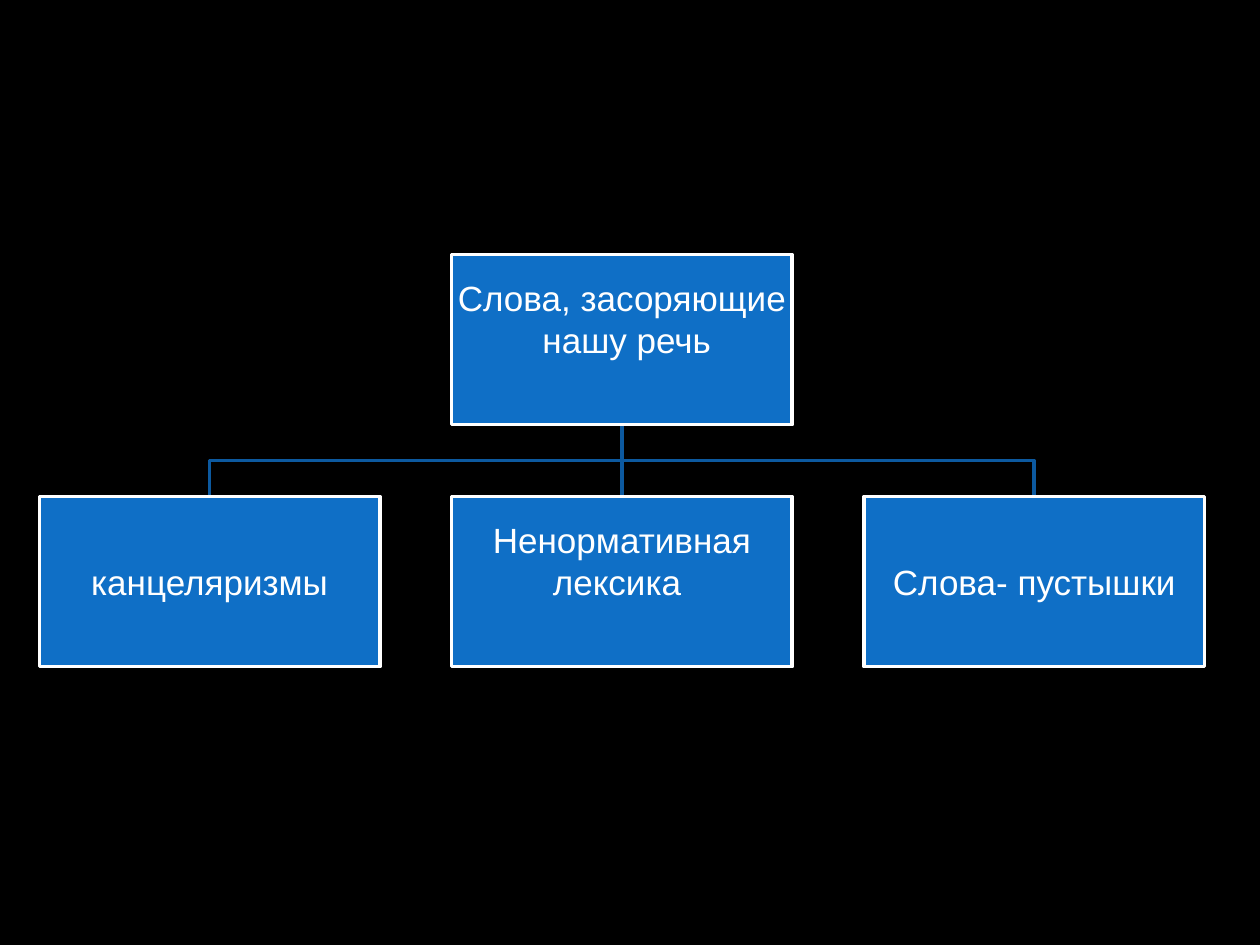
"""Build a slide with a tree of the kinds of words that litter speech."""
from lxml import etree
from pptx import Presentation
from pptx.dml.color import RGBColor
from pptx.enum.shapes import MSO_CONNECTOR, MSO_SHAPE
from pptx.enum.text import MSO_ANCHOR, PP_ALIGN
from pptx.oxml.ns import qn
from pptx.util import Pt

RECTANGLE = MSO_SHAPE.RECTANGLE
STRAIGHT = MSO_CONNECTOR.STRAIGHT
MIDDLE = MSO_ANCHOR.MIDDLE
CENTER = PP_ALIGN.CENTER

BLACK = RGBColor(0x00, 0x00, 0x00)
WHITE = RGBColor(0xFF, 0xFF, 0xFF)
BLUE = RGBColor(0x0F, 0x6F, 0xC6)
DARK_BLUE = RGBColor(0x0C, 0x59, 0x9F)

BOX_WIDTH, BOX_HEIGHT = 194.6, 97.3
FIRST_LEFT, COLUMN_STEP = 22.5, 235.6
ROOT_TOP, BRANCH_TOP = 145.4, 283.7
ROOT_COLUMN = 1
INSET, RAISED_INSET = 0.9, 24.9
LINE_WIDTH = 2

ROOT = ("Слова, засоряющие\v нашу речь", RAISED_INSET)
BRANCHES = [
    ("канцеляризмы", INSET),
    ("Ненормативная\nлексика ", RAISED_INSET),
    ("Слова- пустышки", INSET),
]


def column_left(column):
    return FIRST_LEFT + column * COLUMN_STEP


def column_center(column):
    return column_left(column) + BOX_WIDTH / 2


def style_line(line, color):
    line.color.rgb = color
    line.width = Pt(LINE_WIDTH)


def add_box(slide, column, top, label, bottom_inset):
    box = slide.shapes.add_shape(
        RECTANGLE, Pt(column_left(column)), Pt(top), Pt(BOX_WIDTH), Pt(BOX_HEIGHT))
    box.shadow.inherit = False
    box.fill.solid()
    box.fill.fore_color.rgb = BLUE
    style_line(box.line, WHITE)
    frame = box.text_frame
    frame.word_wrap = True
    frame.vertical_anchor = MIDDLE
    frame.margin_left = frame.margin_right = frame.margin_top = Pt(INSET)
    frame.margin_bottom = Pt(bottom_inset)
    frame.text = label
    for paragraph in frame.paragraphs:
        paragraph.alignment = CENTER
        for run in paragraph.runs:
            run.font.name = "Arial"
            run.font.size = Pt(20)
            run.font.color.rgb = WHITE


def add_stem(slide, x, top, bottom):
    stem = slide.shapes.add_connector(STRAIGHT, Pt(x), Pt(top), Pt(x), Pt(bottom))
    style_line(stem.line, DARK_BLUE)
    etree.SubElement(stem._element.spPr, qn("a:effectLst"))


def add_elbow(slide, start_x, end_x, top, bottom):
    middle = (top + bottom) / 2
    corners = [(start_x, middle), (end_x, middle), (end_x, bottom)]
    builder = slide.shapes.build_freeform(Pt(start_x), Pt(top))
    builder.add_line_segments([(Pt(x), Pt(y)) for x, y in corners], close=False)
    elbow = builder.convert_to_shape()
    elbow.shadow.inherit = False
    elbow.fill.background()
    style_line(elbow.line, DARK_BLUE)


def add_link(slide, column):
    root_x, branch_x = column_center(ROOT_COLUMN), column_center(column)
    root_bottom = ROOT_TOP + BOX_HEIGHT
    if column == ROOT_COLUMN:
        add_stem(slide, root_x, root_bottom, BRANCH_TOP)
    else:
        add_elbow(slide, root_x, branch_x, root_bottom, BRANCH_TOP)


def main():
    presentation = Presentation()
    presentation.slide_width, presentation.slide_height = Pt(720), Pt(540)
    slide = presentation.slides.add_slide(presentation.slide_layouts[6])
    slide.background.fill.solid()
    slide.background.fill.fore_color.rgb = BLACK
    for column in range(len(BRANCHES)):
        add_link(slide, column)
    add_box(slide, ROOT_COLUMN, ROOT_TOP, *ROOT)
    for column, branch in enumerate(BRANCHES):
        add_box(slide, column, BRANCH_TOP, *branch)
    presentation.save("out.pptx")


if __name__ == "__main__":
    main()
